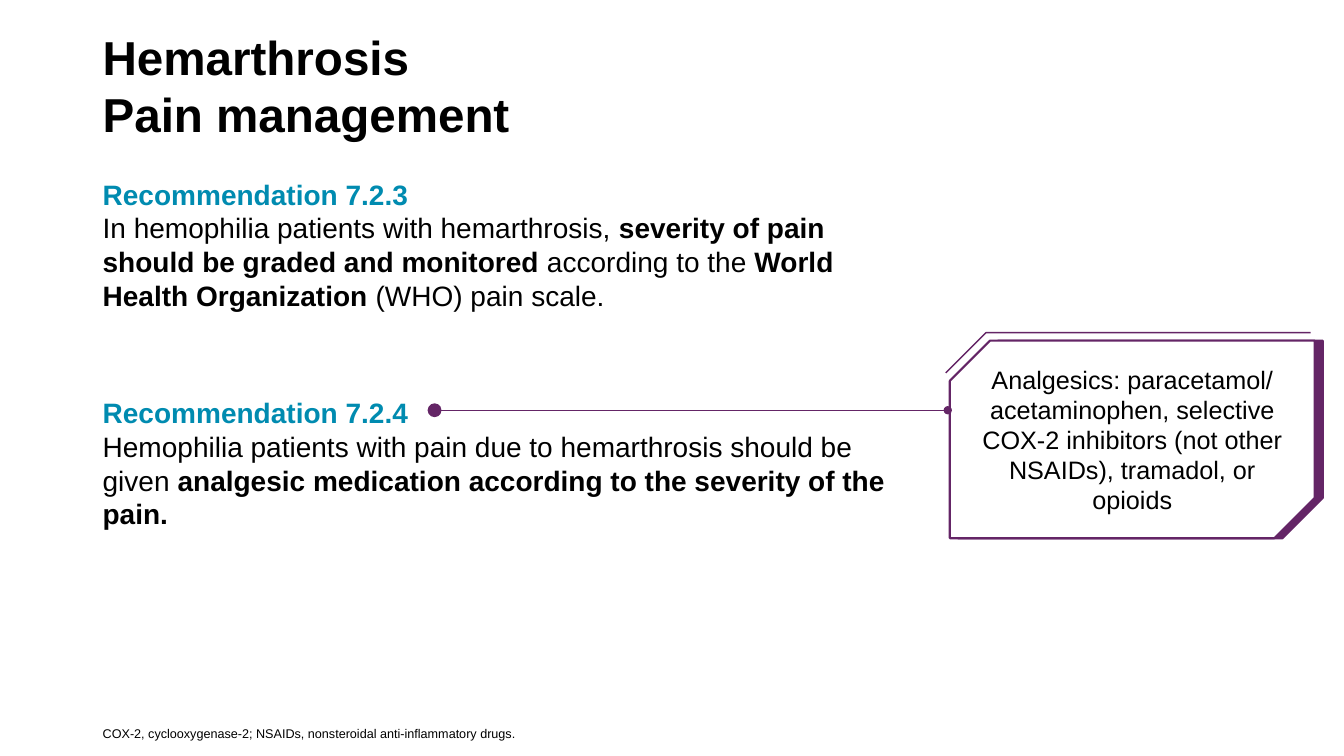
from dataclasses import dataclass

from lxml.etree import SubElement
from pptx import Presentation
from pptx.dml.color import RGBColor
from pptx.enum.shapes import MSO_CONNECTOR, MSO_SHAPE
from pptx.enum.text import MSO_ANCHOR, PP_ALIGN
from pptx.oxml.ns import qn
from pptx.util import Inches, Pt

TITLE = [[("Hemarthrosis", "bold"), "\n", ("Pain management", "bold")]]
RECOMMENDATIONS = [
    [
        ("Recommendation 7.2.3", "heading"),
        "\n",
        ("In hemophilia patients with hemarthrosis, ", "plain"),
        ("severity of pain should be graded and monitored ", "bold"),
        ("according to the ", "plain"),
        ("World Health Organization ", "bold"),
        ("(WHO) pain scale.", "plain"),
    ],
    [
        ("Recommendation 7.2.4", "heading"),
        "\n",
        ("Hemophilia patients with pain due to hemarthrosis should be given ", "plain"),
        ("analgesic medication according to the severity of the pain.", "bold"),
    ],
]
ANALGESICS = [[(
    "Analgesics: paracetamol/ acetaminophen, selective COX-2 inhibitors "
    "(not other NSAIDs), tramadol, or opioids", "plain")]]
ABBREVIATIONS = [[(
    "COX-2, cyclooxygenase-2; NSAIDs, nonsteroidal anti-inflammatory drugs.", "plain")]]


@dataclass(frozen=True)
class Theme:
    font: str = "Arial"
    text: RGBColor = RGBColor(0, 0, 0)
    heading: RGBColor = RGBColor(0x00, 0x8B, 0xB0)
    accent: RGBColor = RGBColor(0x64, 0x25, 0x66)
    paper: RGBColor = RGBColor(255, 255, 255)
    title_size: int = 34
    body_size: int = 20
    callout_size: int = 18
    note_size: int = 9


THEME = Theme()
WIDTH, HEIGHT = 13.33, 7.5
MARGIN = 0.92
CALLOUT_LEFT, CALLOUT_TOP = 9.42, 3.38
CALLOUT_WIDTH, CALLOUT_HEIGHT = 3.62, 1.96
CORNER = 0.4
OFFSET = 0.08
LEADER_LEFT, LEADER_RIGHT, LEADER_Y = 4.31, 9.4, 4.07


def write_text(shape, paragraphs, size, anchor=MSO_ANCHOR.TOP,
               align=PP_ALIGN.LEFT, gap=0, bottom=0.05):
    frame = shape.text_frame
    frame.word_wrap = True
    frame.vertical_anchor = anchor
    frame.margin_bottom = Inches(bottom)
    for index, parts in enumerate(paragraphs):
        paragraph = frame.add_paragraph() if index else frame.paragraphs[0]
        paragraph.alignment = align
        paragraph.space_before = Pt(gap if index else 0)
        paragraph.font.size = Pt(size)
        for part in parts:
            if part == "\n":
                paragraph.add_line_break()
                continue
            words, style = part
            run = paragraph.add_run()
            run.text = words
            run.font.name = THEME.font
            run.font.size = Pt(size)
            run.font.bold = style != "plain"
            run.font.color.rgb = THEME.heading if style == "heading" else THEME.text


def add_text(slide, left, top, width, height, paragraphs, size, **text_format):
    box = slide.shapes.add_textbox(*map(Inches, (left, top, width, height)))
    write_text(box, paragraphs, size, **text_format)


def add_snipped_box(slide, left, fill):
    shape = slide.shapes.add_shape(
        MSO_SHAPE.SNIP_2_DIAG_RECTANGLE,
        *map(Inches, (left, CALLOUT_TOP, CALLOUT_WIDTH, CALLOUT_HEIGHT)))
    shape.adjustments[0] = CORNER / CALLOUT_HEIGHT
    shape.adjustments[1] = 0
    shape.shadow.inherit = False
    shape.fill.solid()
    shape.fill.fore_color.rgb = fill
    shape.line.color.rgb = THEME.accent
    shape.line.width = Pt(1.5)
    return shape


def add_leader(slide):
    leader = slide.shapes.add_connector(
        MSO_CONNECTOR.STRAIGHT,
        *map(Inches, (LEADER_LEFT, LEADER_Y, LEADER_RIGHT, LEADER_Y)))
    leader.line.color.rgb = THEME.accent
    leader.line.width = Pt(0.5)
    outline = leader.line._get_or_add_ln()
    for end, size in (("a:headEnd", "lg"), ("a:tailEnd", "med")):
        SubElement(outline, qn(end), type="oval", w=size, len=size)
    SubElement(leader._element.spPr, qn("a:effectLst"))


def add_corner_line(slide):
    left = CALLOUT_LEFT - OFFSET / 2
    top = CALLOUT_TOP - OFFSET
    builder = slide.shapes.build_freeform(
        Inches(left), Inches(top + CORNER), scale=1.0)
    builder.add_line_segments(
        [(Inches(left + CORNER), Inches(top)),
         (Inches(left + CALLOUT_WIDTH), Inches(top))], close=False)
    shape = builder.convert_to_shape()
    shape.shadow.inherit = False
    shape.fill.background()
    shape.line.color.rgb = THEME.accent
    shape.line.width = Pt(1)


def main():
    presentation = Presentation()
    presentation.slide_width = Inches(WIDTH)
    presentation.slide_height = Inches(HEIGHT)
    slide = presentation.slides.add_slide(presentation.slide_layouts[6])
    add_text(slide, MARGIN, 0.25, 11.5, 1.19, TITLE, THEME.title_size,
             anchor=MSO_ANCHOR.MIDDLE)
    add_text(slide, MARGIN, 1.71, 8.07, 5.05, RECOMMENDATIONS, THEME.body_size, gap=60)
    add_text(slide, MARGIN, 6.95, 10.85, 0.4, ABBREVIATIONS, THEME.note_size,
             anchor=MSO_ANCHOR.BOTTOM, bottom=0)
    add_snipped_box(slide, CALLOUT_LEFT + OFFSET, THEME.accent)
    callout = add_snipped_box(slide, CALLOUT_LEFT, THEME.paper)
    write_text(callout, ANALGESICS, THEME.callout_size,
               anchor=MSO_ANCHOR.MIDDLE, align=PP_ALIGN.CENTER)
    add_leader(slide)
    add_corner_line(slide)
    presentation.save("out.pptx")


if __name__ == "__main__":
    main()
